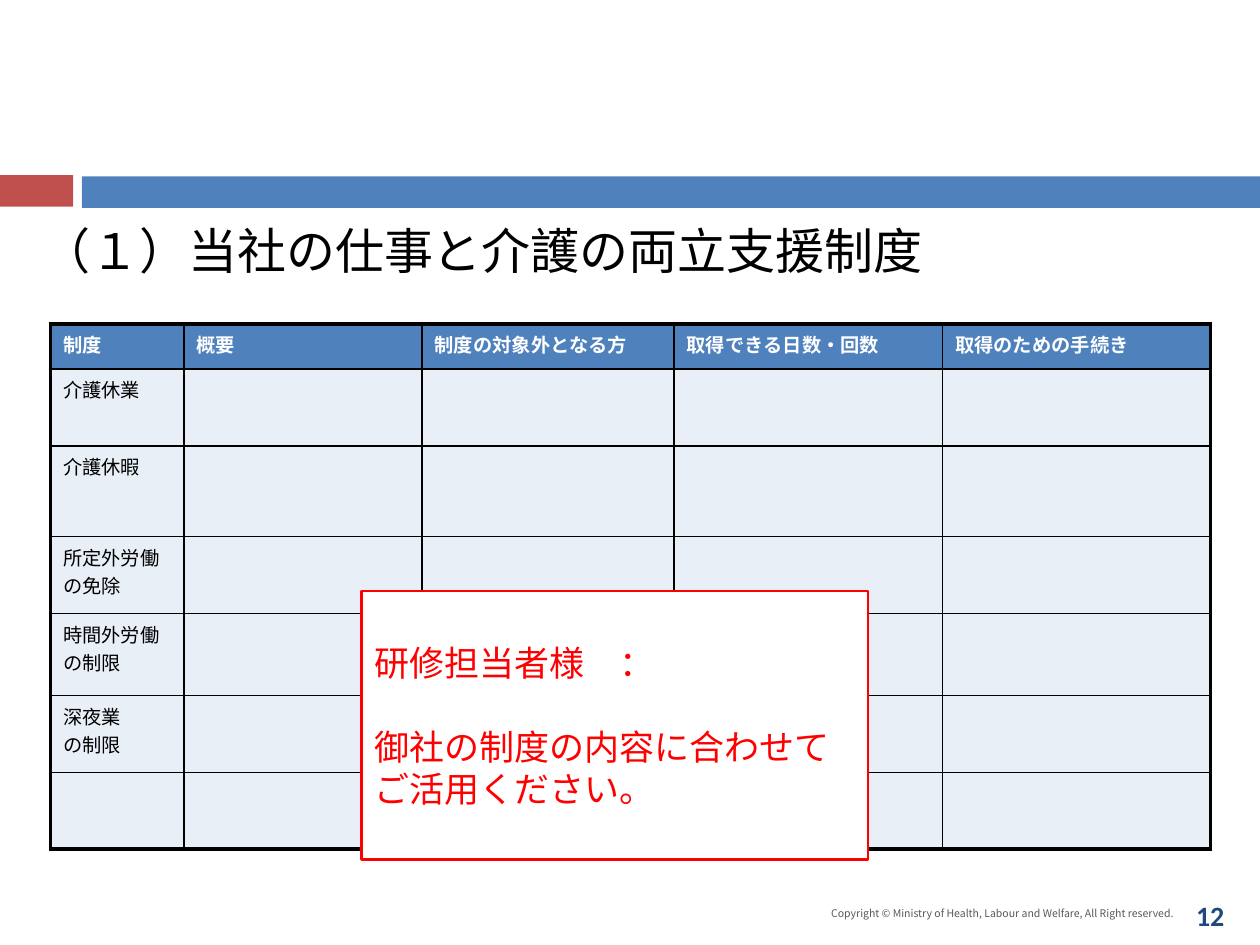
from lxml import etree
from pptx import Presentation, util as u
from pptx.dml.color import RGBColor
from pptx.enum import shapes, text
from pptx.oxml.ns import qn

COLORS = {
    "red": "C0504D", "blue": "4F81BD", "pale": "E9EFF7", "black": "000000",
    "white": "FFFFFF", "grey": "595959", "navy": "1F497D", "alert": "FF0000",
}
JAPANESE = "Noto Sans CJK JP"
LATIN = "Calibri"
COLUMNS = [1.06, 1.89, 2, 2.13, 2.13]
ROWS = [0.36, 0.61, 0.72, 0.61, 0.65, 0.61, 0.61]
HEADERS = ["制度", "概要", "制度の対象外となる方", "取得できる日数・回数", "取得のための手続き"]
SYSTEMS = ["介護休業", "介護休暇", "所定外労働の免除", "時間外労働の制限", "深夜業\vの制限", ""]


class SlideBuilder:
    def __init__(self, slide):
        self.slide = slide

    def color(self, name):
        return RGBColor.from_string(COLORS[name])

    def box(self, left, top, width, height):
        return [u.Inches(value) for value in (left, top, width, height)]

    def set_text(self, paragraph, words, size, color, font=LATIN, bold=False,
                 align=text.PP_ALIGN.LEFT):
        paragraph.text = words
        paragraph.alignment = align
        paragraph.font.size = u.Pt(size)
        paragraph.font.name = font
        paragraph.font.bold = bold
        paragraph.font.color.rgb = self.color(color)

    def title(self, words, *place):
        shape = self.slide.shapes.title
        shape.left, shape.top, shape.width, shape.height = self.box(*place)
        frame = shape.text_frame
        frame.auto_size = text.MSO_AUTO_SIZE.NONE
        frame.vertical_anchor = text.MSO_ANCHOR.TOP
        self.set_text(frame.paragraphs[0], words, 28, "black")

    def rectangle(self, fill, *place, line=None):
        shape = self.slide.shapes.add_shape(
            shapes.MSO_SHAPE.RECTANGLE, *self.box(*place))
        shape.shadow.inherit = False
        shape.fill.solid()
        shape.fill.fore_color.rgb = self.color(fill)
        if line:
            shape.line.color.rgb = self.color(line)
            shape.line.width = u.Pt(1.5)
        else:
            shape.line.fill.background()
        return shape

    def label(self, words, *place, anchor=text.MSO_ANCHOR.TOP, **style):
        frame = self.slide.shapes.add_textbox(*self.box(*place)).text_frame
        frame.word_wrap = True
        frame.vertical_anchor = anchor
        self.set_text(frame.paragraphs[0], words, **style)

    def notice(self, lines, *place):
        frame = self.rectangle("white", *place, line="alert").text_frame
        frame.word_wrap = True
        frame.vertical_anchor = text.MSO_ANCHOR.MIDDLE
        for index, (words, space) in enumerate(lines):
            paragraph = frame.add_paragraph() if index else frame.paragraphs[0]
            self.set_text(paragraph, words, 20, "alert")
            paragraph.space_before = u.Pt(space)

    def borders(self, cell, outer):
        properties = cell._tc.get_or_add_tcPr()
        for index, (side, is_outer) in enumerate(outer.items()):
            line = etree.Element(qn(f"a:{side}"), w=str(u.Pt(2.25 if is_outer else 1)))
            fill = etree.SubElement(line, qn("a:solidFill"))
            etree.SubElement(fill, qn("a:srgbClr"), val=COLORS["black"])
            properties.insert(index, line)

    def table(self, rows, *place):
        last_row, last_column = len(ROWS) - 1, len(COLUMNS) - 1
        table = self.slide.shapes.add_table(
            len(ROWS), len(COLUMNS), *self.box(*place)).table
        for column, width in zip(table.columns, COLUMNS):
            column.width = u.Inches(width)
        for row_index, (row, height, words) in enumerate(zip(table.rows, ROWS, rows)):
            row.height = u.Inches(height)
            is_header = row_index == 0
            for column_index, cell in enumerate(row.cells):
                cell.fill.solid()
                cell.fill.fore_color.rgb = self.color("blue" if is_header else "pale")
                paragraph = cell.text_frame.paragraphs[0]
                self.set_text(paragraph, words[column_index], 11,
                              "white" if is_header else "black", JAPANESE, is_header)
                paragraph.space_before = u.Pt(7)
                self.borders(cell, {
                    "lnL": column_index == 0, "lnR": column_index == last_column,
                    "lnT": is_header, "lnB": row_index == last_row})


def main():
    presentation = Presentation()
    presentation.slide_width, presentation.slide_height = u.Inches(10), u.Inches(7.5)
    slide = presentation.slides.add_slide(presentation.slide_layouts[5])
    builder = SlideBuilder(slide)
    builder.rectangle("red", 0, 1.39, 0.58, 0.25)
    builder.rectangle("blue", 0.65, 1.4, 9.35, 0.25)
    builder.label("Copyright © Ministry of Health, Labour and Welfare, All Right reserved.",
                  5.87, 7.15, 3.54, 0.3, size=6, color="grey", font=JAPANESE,
                  align=text.PP_ALIGN.RIGHT)
    builder.label("12", 9.21, 7.03, 0.79, 0.47, anchor=text.MSO_ANCHOR.MIDDLE,
                  size=16, color="navy", bold=True, align=text.PP_ALIGN.CENTER)
    blanks = [""] * (len(COLUMNS) - 1)
    builder.table([HEADERS] + [[system] + blanks for system in SYSTEMS],
                  0.4, 2.57, sum(COLUMNS), sum(ROWS))
    builder.title("（１）当社の仕事と介護の両立支援制度", 0.23, 1.7, 9.61, 0.71)
    builder.notice([("研修担当者様　：", 0), ("御社の制度の内容に合わせて", 24),
                    ("ご活用ください。", 0)], 2.87, 4.69, 4.02, 2.13)
    presentation.save("out.pptx")


if __name__ == "__main__":
    main()
